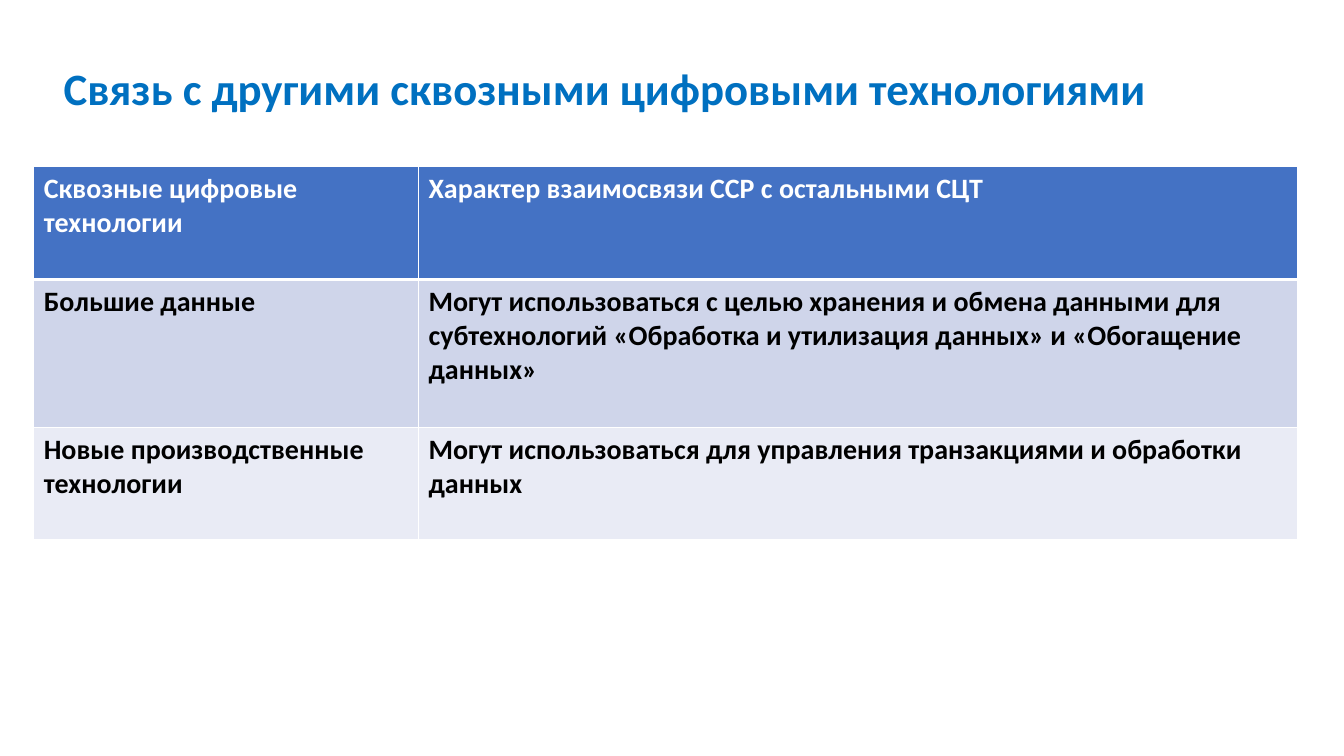
from lxml.etree import SubElement
from pptx import Presentation
from pptx.dml.color import RGBColor as RGB
from pptx.enum.text import MSO_ANCHOR as ANCHOR, PP_ALIGN as ALIGN
from pptx.oxml.ns import qn
from pptx.util import Cm, Pt

COLORS = {"title": "0070C0", "header": "4472C4", "odd": "CFD5EA",
          "even": "E9EBF5", "white": "FFFFFF", "black": "000000"}
COL_WIDTHS = [9.7, 22.15]
ROW_HEIGHTS = [2.84, 3.73, 2.83]
ROW_STYLES = [("header", "white"), ("odd", "black"), ("even", "black")]
ROWS = [
    ("Сквозные цифровые технологии",
     "Характер взаимосвязи ССР с остальными СЦТ"),
    ("Большие данные",
     "Могут использоваться с целью хранения и обмена данными для "
     "субтехнологий «Обработка и утилизация данных» и «Обогащение данных»"),
    ("Новые производственные технологии",
     "Могут использоваться для управления транзакциями и обработки данных"),
]


def write(tf, text, size, color):
    tf.text = text
    p = tf.paragraphs[0]
    p.alignment = ALIGN.LEFT
    font = p.runs[0].font
    for name, value in {"name": "Calibri", "size": Pt(size), "bold": True}.items():
        setattr(font, name, value)
    font.color.rgb = RGB.from_string(COLORS[color])
    return p


def set_borders(cell, widths):
    tcPr = cell._tc.get_or_add_tcPr()
    for side, width in widths.items():
        ln = SubElement(tcPr, qn(f"a:ln{side}"), w=str(Pt(width)))
        fill = SubElement(ln, qn("a:solidFill"))
        SubElement(fill, qn("a:srgbClr"), val=COLORS["white"])


def add_title(s, text):
    title = s.shapes.title
    box = {"left": 1.35, "top": 0.46, "width": 31.47, "height": 3.68}
    for name, value in box.items():
        setattr(title, name, Cm(value))
    tf = title.text_frame
    tf.word_wrap = True
    tf.vertical_anchor = ANCHOR.MIDDLE
    write(tf, text, 32, "title").line_spacing = 0.9


def add_technology_table(s):
    table = s.shapes.add_table(len(ROWS), len(COL_WIDTHS), Cm(0.85), Cm(4.2),
                               Cm(sum(COL_WIDTHS)), Cm(sum(ROW_HEIGHTS))).table
    for col, width in zip(table.columns, COL_WIDTHS):
        col.width = Cm(width)
    for i, (row, height) in enumerate(zip(table.rows, ROW_HEIGHTS)):
        row.height = Cm(height)
        fill, color = ROW_STYLES[i]
        # Thick rule between the header and the body
        top, bottom = (3 if i == 1 else 1), (3 if i == 0 else 1)
        for cell, text in zip(row.cells, ROWS[i]):
            write(cell.text_frame, text, 20, color)
            set_borders(cell, {"L": 1, "R": 1, "T": top, "B": bottom})
            cell.fill.solid()
            cell.fill.fore_color.rgb = RGB.from_string(COLORS[fill])


def main():
    prs = Presentation()
    prs.slide_width, prs.slide_height = Cm(33.87), Cm(19.05)
    s = prs.slides.add_slide(prs.slide_layouts[5])
    add_title(s, "Связь с другими сквозными цифровыми технологиями")
    add_technology_table(s)
    prs.save("out.pptx")


if __name__ == "__main__":
    main()
